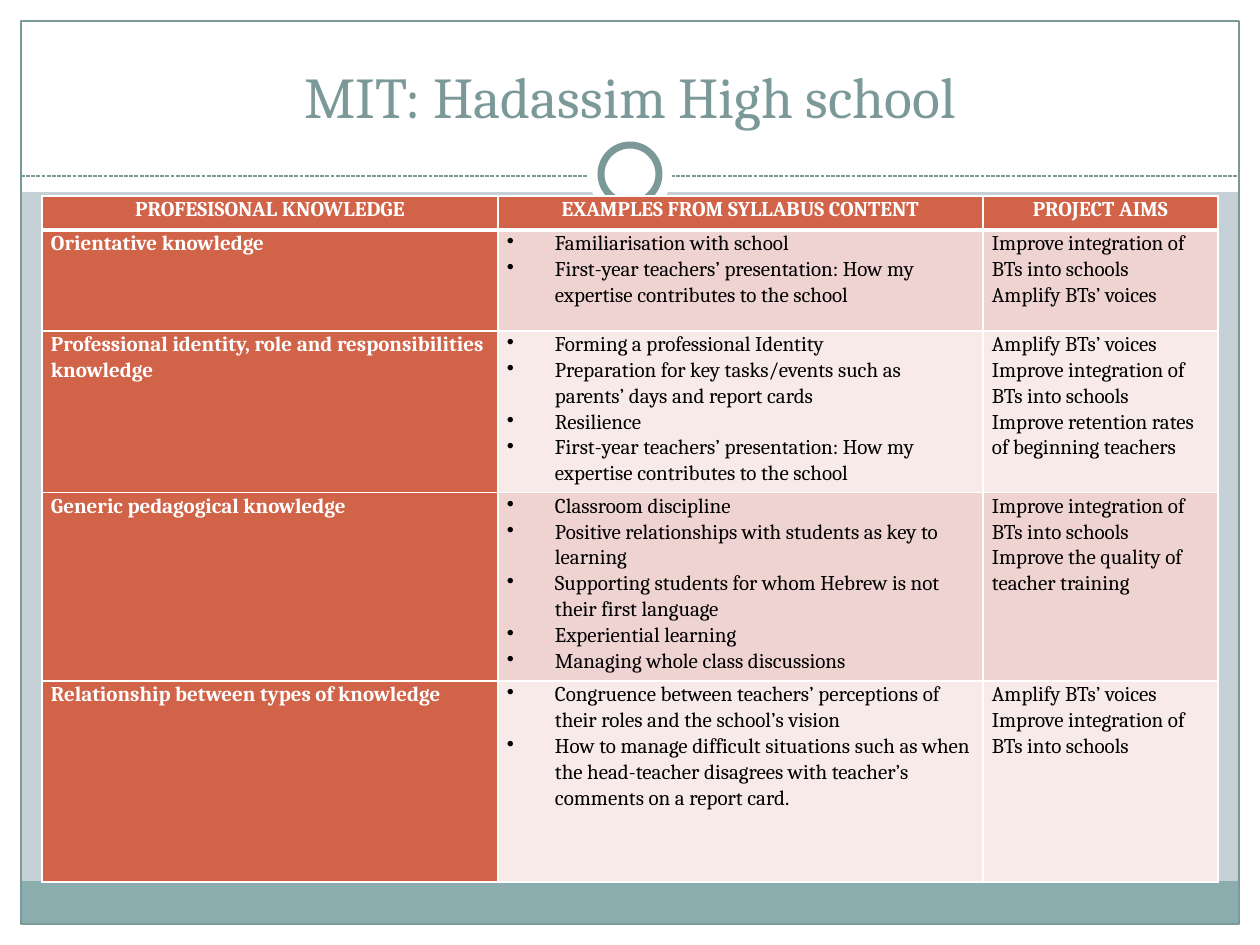
import pptx
import pptx.util
import pptx.oxml
import pptx.oxml.ns
from pptx.dml.color import RGBColor
from pptx.enum.dml import MSO_LINE
from pptx.enum.shapes import MSO_CONNECTOR, MSO_SHAPE
from pptx.enum.text import MSO_ANCHOR, PP_ALIGN

EMU_PER_PX = 914400 / 126
WIDTH, HEIGHT = 1260, 945
FONT = "Cambria"

WHITE = RGBColor(0xFF, 0xFF, 0xFF)
BLACK = RGBColor(0, 0, 0)
BACKDROP = RGBColor(0xC5, 0xD1, 0xD7)
TEAL = RGBColor(0x7C, 0x99, 0x9A)
FOOTER = RGBColor(0x8C, 0xAD, 0xAE)
RUST = RGBColor(0xD1, 0x63, 0x49)
ROW_FILLS = (RGBColor(0xEE, 0xD3, 0xD0), RGBColor(0xF7, 0xEA, 0xE9))

INTEGRATION = "Improve integration of BTs into schools"
VOICES = "Amplify BTs’ voices"
PRESENTATION = ("First-year teachers’ presentation: How my expertise "
                "contributes to the school")

HEADERS = ("PROFESISONAL KNOWLEDGE", "EXAMPLES FROM SYLLABUS CONTENT",
           "PROJECT AIMS")
ROWS = (
    ("Orientative knowledge",
     ["Familiarisation with school", PRESENTATION],
     [INTEGRATION, VOICES]),
    ("Professional identity, role and responsibilities knowledge",
     ["Forming a professional Identity",
      "Preparation for key tasks/events such as parents’ days and report cards",
      "Resilience", PRESENTATION],
     [VOICES, INTEGRATION, "Improve retention rates of beginning teachers"]),
    ("Generic pedagogical knowledge",
     ["Classroom discipline",
      "Positive relationships with students as key to learning",
      "Supporting students for whom Hebrew is not their first language",
      "Experiential learning", "Managing whole class discussions"],
     [INTEGRATION, "Improve the quality of teacher training"]),
    ("Relationship between types of knowledge",
     ["Congruence between teachers’ perceptions of their roles and the "
      "school’s vision",
      "How to manage difficult situations such as when the head-teacher "
      "disagrees with teacher’s comments on a report card."],
     [VOICES, INTEGRATION]),
)
COLUMN_WIDTHS = (456, 485, 235)
ROW_HEIGHTS = (34, 101, 155, 181, 201)


def px(length):
    return pptx.util.Emu(round(length * EMU_PER_PX))


def set_attributes(target, values):
    for name, value in values.items():
        setattr(target, name, value)


def add_panel(slide, kind, box, fill=None, line_width=None):
    shape = slide.shapes.add_shape(kind, *map(px, box))
    shape.shadow.inherit = False
    if fill is None:
        shape.fill.background()
    else:
        shape.fill.solid()
        shape.fill.fore_color.rgb = fill
    if line_width is None:
        shape.line.fill.background()
    else:
        shape.line.color.rgb = TEAL
        shape.line.width = pptx.util.Pt(line_width)


def add_divider(slide, left, right, y):
    line = slide.shapes.add_connector(
        MSO_CONNECTOR.STRAIGHT, px(left), px(y), px(right), px(y))
    line.line.color.rgb = TEAL
    set_attributes(line.line, {"width": pptx.util.Pt(0.75),
                               "dash_style": MSO_LINE.SQUARE_DOT})
    properties = line._element.spPr
    properties.append(pptx.oxml.parse_xml(
        f'<a:effectLst {pptx.oxml.ns.nsdecls("a")}/>'))


def write_paragraph(paragraph, text, size, color, bold=False,
                    align=PP_ALIGN.LEFT):
    paragraph.alignment = align
    run = paragraph.add_run()
    run.text = text
    set_attributes(run.font, {"name": FONT, "size": pptx.util.Pt(size),
                              "bold": bold})
    run.font.color.rgb = color


def add_title(slide, box, text):
    frame = slide.shapes.add_textbox(*map(px, box)).text_frame
    set_attributes(frame, {"word_wrap": True,
                           "vertical_anchor": MSO_ANCHOR.BOTTOM})
    write_paragraph(frame.paragraphs[0], text, 33, TEAL, align=PP_ALIGN.CENTER)


def add_bullet(paragraph):
    properties = paragraph._p.get_or_add_pPr()
    properties.set("marL", str(px(48)))
    properties.set("indent", str(px(-48)))
    properties.append(pptx.oxml.parse_xml(
        f'<a:buChar {pptx.oxml.ns.nsdecls("a")} char="•"/>'))


def add_borders(cell, top, bottom):
    properties = cell._tc.get_or_add_tcPr()
    for side, width in (("L", 1), ("R", 1), ("T", top), ("B", bottom)):
        properties.append(pptx.oxml.parse_xml(
            f'<a:ln{side} {pptx.oxml.ns.nsdecls("a")} w="{width * 12700}">'
            f'<a:solidFill><a:srgbClr val="{WHITE}"/></a:solidFill>'
            f'</a:ln{side}>'))


def fill_cell(cell, lines, fill, color, bold=False, align=PP_ALIGN.LEFT,
              bullets=False, top=1, bottom=1):
    add_borders(cell, top, bottom)
    cell.fill.solid()
    cell.fill.fore_color.rgb = fill
    set_attributes(cell, {"margin_left": px(9), "margin_right": px(9),
                          "margin_top": 0, "margin_bottom": 0})
    frame = cell.text_frame
    for index, text in enumerate(lines):
        paragraph = frame.add_paragraph() if index else frame.paragraphs[0]
        paragraph.line_spacing = 1.07
        write_paragraph(paragraph, text, 12, color, bold, align)
        if bullets:
            add_bullet(paragraph)


def add_knowledge_table(slide, left, top):
    table = slide.shapes.add_table(
        len(ROW_HEIGHTS), len(COLUMN_WIDTHS), px(left), px(top),
        px(sum(COLUMN_WIDTHS)), px(sum(ROW_HEIGHTS))).table
    for column, width in zip(table.columns, COLUMN_WIDTHS):
        column.width = px(width)
    for row, height in zip(table.rows, ROW_HEIGHTS):
        row.height = px(height)
    for column, text in enumerate(HEADERS):
        fill_cell(table.cell(0, column), [text], RUST, WHITE, bold=True,
                  align=PP_ALIGN.CENTER, bottom=3)
    for row, (knowledge, examples, aims) in enumerate(ROWS, start=1):
        fill = ROW_FILLS[(row - 1) % 2]
        edge = 3 if row == 1 else 1
        fill_cell(table.cell(row, 0), [knowledge], RUST, WHITE, bold=True,
                  top=edge)
        fill_cell(table.cell(row, 1), examples, fill, BLACK, bullets=True,
                  top=edge)
        fill_cell(table.cell(row, 2), aims, fill, BLACK, top=edge)


def main():
    presentation = pptx.Presentation()
    set_attributes(presentation, {"slide_width": px(WIDTH),
                                  "slide_height": px(HEIGHT)})
    slide = presentation.slides.add_slide(presentation.slide_layouts[6])
    slide.background.fill.solid()
    slide.background.fill.fore_color.rgb = BACKDROP

    # White margins and title band
    margin = 21
    for box in ((0, HEIGHT - margin, WIDTH, margin), (0, 0, WIDTH, 192),
                (0, 0, margin, HEIGHT), (WIDTH - margin, 0, margin, HEIGHT)):
        add_panel(slide, MSO_SHAPE.RECTANGLE, box, WHITE)

    # Footer band, frame and divider
    inner = WIDTH - 2 * margin
    add_panel(slide, MSO_SHAPE.RECTANGLE, (margin, 881, inner, 43), FOOTER)
    add_panel(slide, MSO_SHAPE.RECTANGLE,
              (margin, margin, inner, HEIGHT - 2 * margin), line_width=0.75)
    add_divider(slide, margin, WIDTH - margin, 176)

    # Ring on the divider
    add_panel(slide, MSO_SHAPE.OVAL, (588, 132, 84, 84), WHITE)
    add_panel(slide, MSO_SHAPE.OVAL, (601, 145, 58, 58), WHITE, line_width=4)

    # Title and table
    add_title(slide, (42, 32, 1176, 104), "MIT: Hadassim High school")
    add_knowledge_table(slide, 42, 196)
    presentation.save("out.pptx")


if __name__ == "__main__":
    main()
